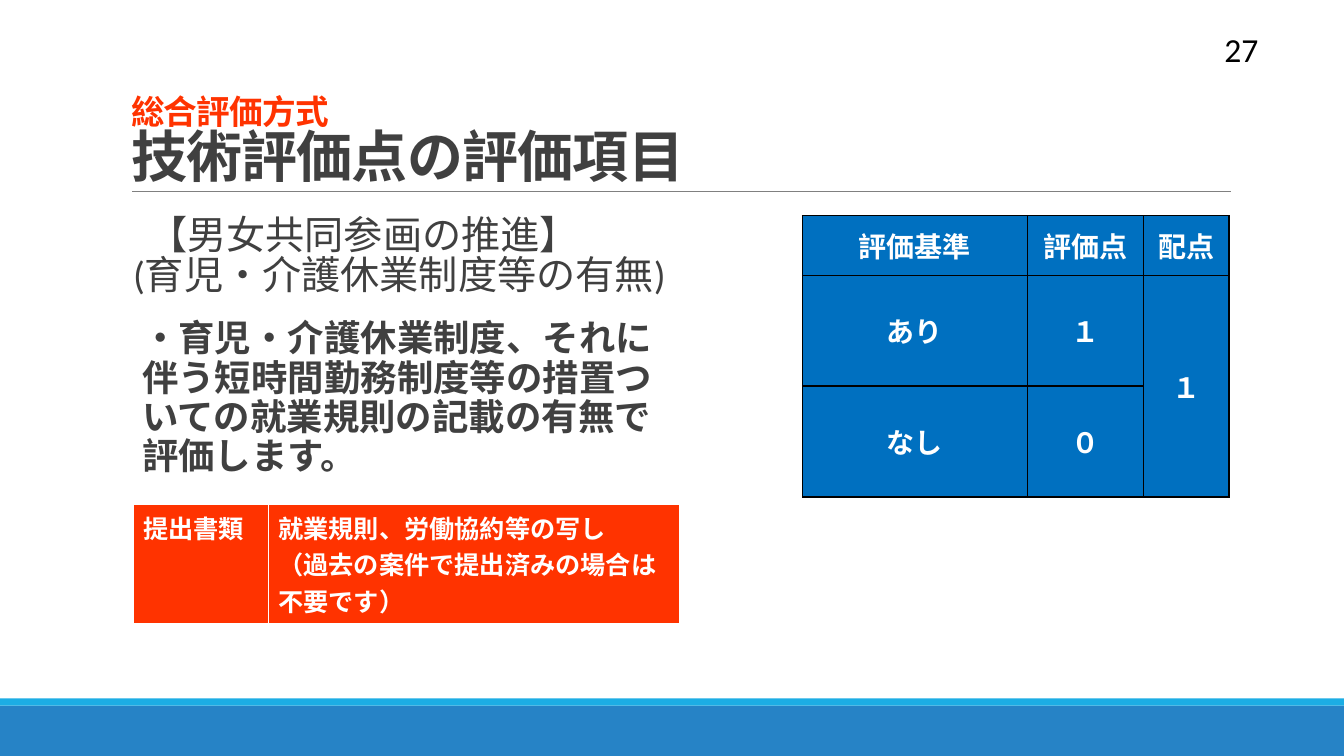
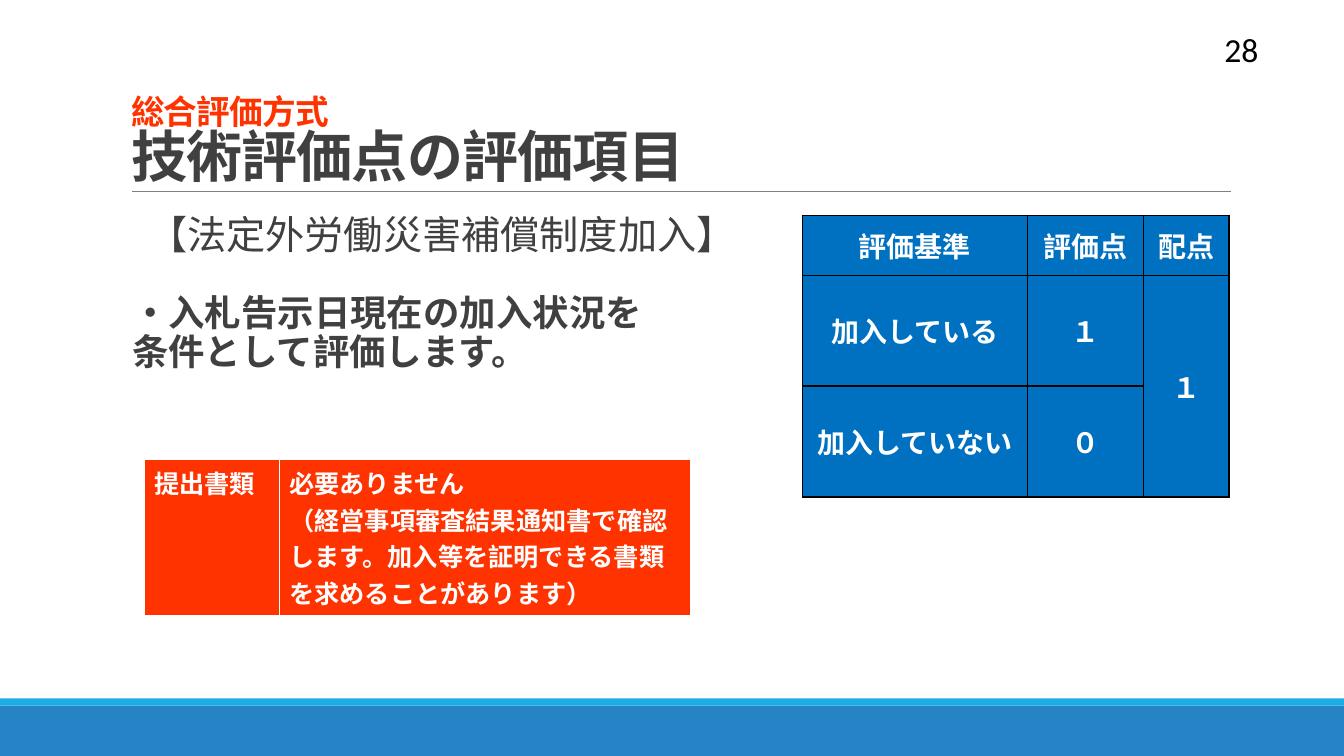
from lxml.etree import SubElement as Sub
from pptx import Presentation
from pptx.dml.color import RGBColor
from pptx.enum.shapes import MSO_CONNECTOR as Link, MSO_SHAPE as Shape
from pptx.enum.text import MSO_ANCHOR as Anchor, MSO_AUTO_SIZE as Fit, PP_ALIGN as Align
from pptx.oxml.ns import qn
from pptx.util import Emu, Pt

# Style
SCALE = 9144  # EMU per px, 100 px to the inch
FONT, CJK = "Calibri", "Noto Sans CJK JP"
BLUE, CYAN, CELL, RED = "2683C6", "1CADE4", "0070C0", "FF3300"
DARK, GRAY, WHITE, BLACK = "404040", "808080", "FFFFFF", "000000"


def px(n):
    return Emu(n * SCALE)


def box(*nums):
    return [px(n) for n in nums]


def tint(code):
    return RGBColor.from_string(code)


class Deck:
    def __init__(self):
        self.prs = Presentation()
        self.prs.slide_width, self.prs.slide_height = box(1333, 750)
        self.slide = None

    # Shared parts
    def start(self, num):
        self.slide = self.prs.slides.add_slide(self.prs.slide_layouts[1])
        self.band(700, 50, BLUE)
        self.band(693, 7, CYAN)
        self.rule(131, 1221, 190)
        self.title("総合評価方式", "技術評価点の評価項目")
        page = self.text((1115, 29, 143, 40), str(num), 24, BLACK)
        page.vertical_anchor = Anchor.MIDDLE
        page.paragraphs[0].alignment = Align.RIGHT

    def band(self, top, high, fill):
        bar = self.slide.shapes.add_shape(Shape.RECTANGLE, *box(0, top, 1333, high))
        bar.shadow.inherit = False
        bar.fill.solid()
        bar.fill.fore_color.rgb = tint(fill)
        bar.line.fill.background()

    def rule(self, left, right, top):
        line = self.slide.shapes.add_connector(Link.STRAIGHT, *box(left, top, right, top))
        line.line.color.rgb = tint(GRAY)
        line.line.width = Pt(0.5)
        Sub(line._element.spPr, qn("a:effectLst"))

    # Text
    def font(self, para, size, color, bold=False, name=FONT):
        font = para.font
        font.name, font.size, font.bold = name, Pt(size), bold
        font.color.rgb = tint(color)

    def place(self, shape, area):
        shape.left, shape.top, shape.width, shape.height = box(*area)
        frame = shape.text_frame
        frame.word_wrap, frame.auto_size = True, Fit.NONE
        return frame

    def title(self, label, head):
        frame = self.place(self.slide.shapes.title, (120, 33, 1100, 159))
        frame.vertical_anchor = Anchor.BOTTOM
        para = frame.paragraphs[0]
        para.alignment, para.line_spacing = Align.LEFT, 0.85
        self.font(para, 24, RED, True)
        para.add_run().text = label
        para.add_line_break()
        main = para.add_run()
        main.text = head
        main.font.size, main.font.color.rgb = Pt(40), tint(DARK)
        for run in para.runs:
            run._r.get_or_add_rPr().set("spc", "-50")

    def flow(self, frame, text, size, bold=False):
        frame.margin_left = frame.margin_right = 0
        para = frame.paragraphs[0]
        para.text, para.line_spacing = text, 0.9
        para.space_before, para.space_after = Pt(12), Pt(2)
        self.font(para, size, DARK, bold)
        return para

    def topic(self, text):
        frame = self.place(self.slide.placeholders[1], (108, 209, 652, 91))
        props = self.flow(frame, text, 28)._p.get_or_add_pPr()
        props.set("marL", "0")
        props.set("indent", str(px(39)))
        Sub(props, qn("a:buNone"))
        # The bullet setting precedes the default font
        props.append(props.find(qn("a:defRPr")))

    def text(self, area, text, size, color):
        frame = self.place(self.slide.shapes.add_textbox(*box(*area)), area)
        frame.text = text
        self.font(frame.paragraphs[0], size, color)
        return frame

    def note(self, area, text, size, bold=False):
        frame = self.place(self.slide.shapes.add_textbox(*box(*area)), area)
        self.flow(frame, text, size, bold)

    # Tables
    def grid(self, left, top, cols, rows):
        area = box(left, top, sum(cols), sum(rows))
        table = self.slide.shapes.add_table(len(rows), len(cols), *area).table
        table.first_row = table.horz_banding = False
        for col, wide in zip(table.columns, cols):
            col.width = px(wide)
        for row, high in zip(table.rows, rows):
            row.height = px(high)
        return table

    def cell(self, cell, text, size, fill, name=FONT):
        cell.text = text
        cell.fill.solid()
        cell.fill.fore_color.rgb = tint(fill)
        for para in cell.text_frame.paragraphs:
            self.font(para, size, WHITE, True, name)

    def frame(self, cell):
        props = cell._tc.get_or_add_tcPr()
        for spot, side in enumerate(("lnL", "lnR", "lnT", "lnB")):
            line = Sub(props, qn("a:" + side), w=str(Pt(1)))
            Sub(Sub(line, qn("a:solidFill")), qn("a:srgbClr"), val=BLACK)
            props.insert(spot, line)

    def papers(self, left, top, high, text):
        table = self.grid(left, top, (134, 408), (high,))
        for col, words in enumerate(("提出書類", text)):
            self.cell(table.cell(0, col), words, 18, RED)

    def score(self, good, bad):
        table = self.grid(796, 214, (223, 115, 85), (59, 110, 110))
        rows = ("評価基準", "評価点", "配点"), (good, "１", "１"), (bad, "０", "")
        for r, row in enumerate(rows):
            for c, words in enumerate(row):
                cell = table.cell(r, c)
                self.cell(cell, words, 20, CELL, CJK)
                self.frame(cell)
                cell.vertical_anchor = Anchor.MIDDLE
                cell.margin_left = cell.margin_right = px(6 if r else 9)
                cell.margin_top = cell.margin_bottom = 0
                cell.text_frame.paragraphs[0].alignment = Align.CENTER
        table.cell(1, 2).merge(table.cell(2, 2))


def main():
    deck = Deck()

    # Childcare and care leave
    deck.start(27)
    deck.topic("【男女共同参画の推進】")
    deck.papers(132, 500, 116, "就業規則、労働協約等の写し\n（過去の案件で提出済みの場合は不要です）")
    deck.note((141, 313, 524, 184),
              "・育児・介護休業制度、それに伴う短時間勤務制度等の措置ついての就業規則の記載の有無で評価します。",
              26, True)
    deck.note((132, 249, 633, 84), "(育児・介護休業制度等の有無)", 28)
    deck.score("あり", "なし")

    # Accident compensation cover
    deck.start(28)
    deck.topic("【法定外労働災害補償制度加入】")
    deck.papers(143, 456, 152,
                "必要ありません\n（経営事項審査結果通知書で確認します。加入等を証明できる書類を求めることがあります）")
    deck.note((131, 288, 524, 184), "・入札告示日現在の加入状況を条件として評価します。", 26, True)
    deck.score("加入している", "加入していない")

    deck.prs.save("out.pptx")


if __name__ == "__main__":
    main()
